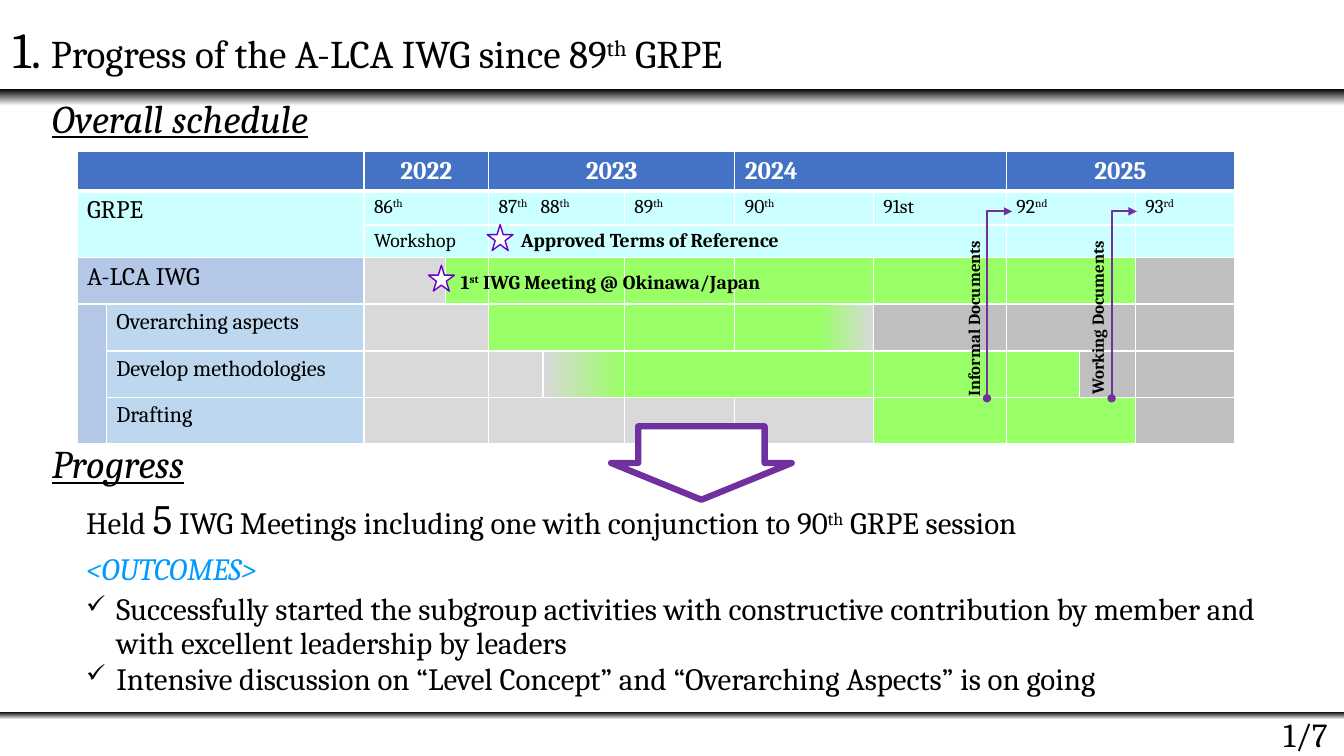
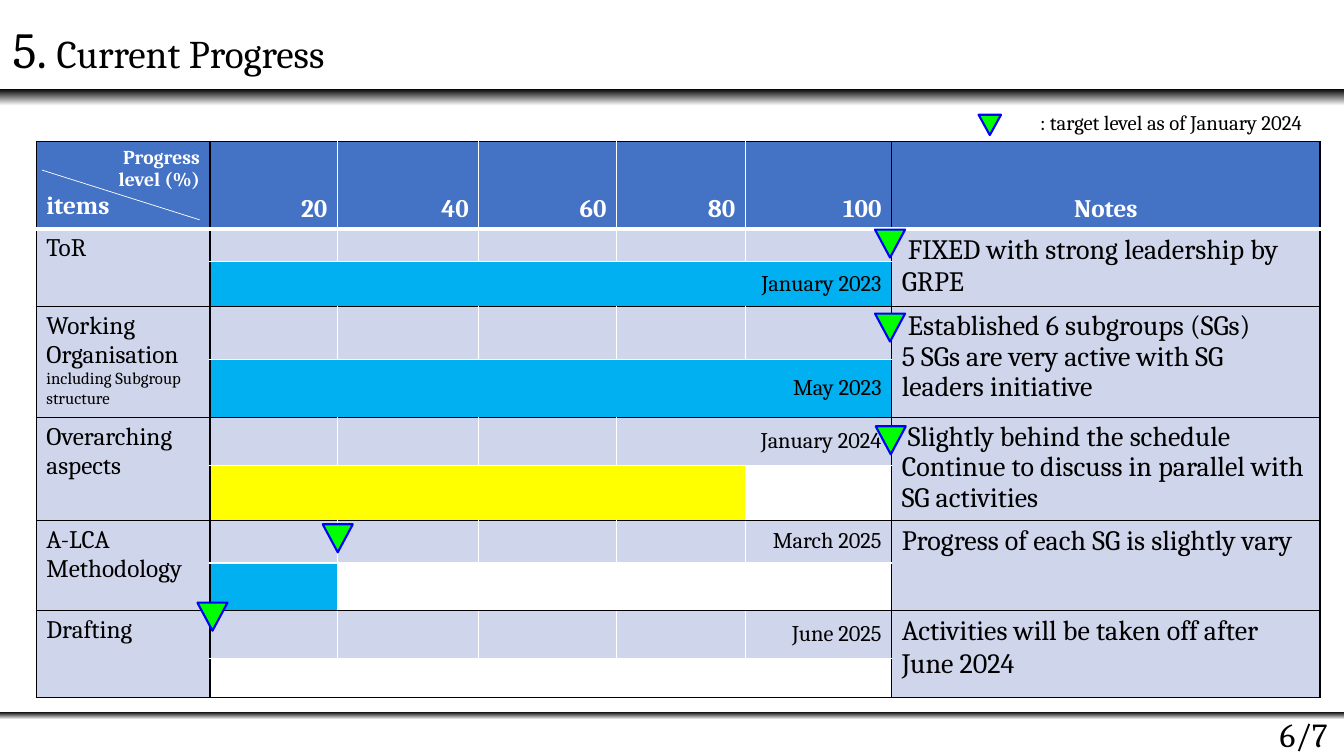
from itertools import product

from lxml import etree
from pptx import Presentation
from pptx.dml.color import RGBColor
from pptx.enum import shapes, text
from pptx.oxml import ns
from pptx.util import Pt

BLACK, WHITE, BLUE, CYAN = "000000", "FFFFFF", "4472C4", "CCFFFF"
PERIWINKLE, PALE_BLUE, LILAC = "B4C7E7", "BDD7EE", "CFD5EA"
GREEN, LIGHT_GREY, GREY = "99FF66", "D9D9D9", "BFBFBF"
SKY, YELLOW, LIME, PURPLE = "00B0F0", "FFFF00", "00FF00", "7030A0"
FADE_OUT = (LIGHT_GREY, GREEN, 0.39)
FADE_IN = (GREEN, LIGHT_GREY, 0.99)
BAND = (BLACK, WHITE, 1)
LEFT, CENTER, RIGHT = (text.PP_ALIGN.LEFT, text.PP_ALIGN.CENTER,
                       text.PP_ALIGN.RIGHT)
TOP, MIDDLE, BOTTOM = (text.MSO_ANCHOR.TOP, text.MSO_ANCHOR.MIDDLE,
                       text.MSO_ANCHOR.BOTTOM)
KIND = shapes.MSO_SHAPE


def paint(fill, colour, angle=180):
    """Fill with one hex colour, or with (first, second, end position)."""
    if isinstance(colour, str):
        fill.solid()
        fill.fore_color.rgb = RGBColor.from_string(colour)
        return
    first, second, end = colour
    fill.gradient()
    fill.gradient_angle = angle
    for stop, shade, position in zip(fill.gradient_stops, (first, second), (0, end)):
        stop.color.rgb = RGBColor.from_string(shade)
        stop.position = position


def write(frame, spans, look, colour=BLACK, **font_look):
    """Add a paragraph of (text, size) spans; text between ^ marks is raised."""
    para = frame.add_paragraph() if frame.text else frame.paragraphs[0]
    for name, value in look.items():
        setattr(para, name, value)
    for words, size in spans:
        for number, part in enumerate(words.split("^")):
            if not part:
                continue
            span = para.add_run()
            span.text = part
            font_format = {"name": "Cambria", "size": Pt(size), **font_look}
            for name, value in font_format.items():
                setattr(span.font, name, value)
            paint(span.font.fill, colour)
            if number % 2:
                span.font._element.set("baseline", "30000")
    return para


deck = Presentation()
deck.slide_width, deck.slide_height = Pt(960), Pt(540)
schedule_page, progress_page = pages = [
    deck.slides.add_slide(deck.slide_layouts[6]) for _ in range(2)]

# Schedule table: each entry is (columns, fill, text); None is a covered cell
schedule = [
    [(2, BLUE, ""), (2, BLUE, "2022"), (3, BLUE, "2023"), (2, BLUE, "2024"),
     (3, BLUE, "2025")],
    [(2, CYAN, "GRPE"), (2, CYAN, "86^th^"), (2, CYAN, "87^th^\t88^th^"),
     (1, CYAN, "89^th^"), (1, CYAN, "90^th^"), (1, CYAN, "91st"),
     (2, CYAN, "92^nd^"), (1, CYAN, "93^rd^")],
    [(2, None, ""), (2, CYAN, "Workshop"), (5, CYAN, ""), (2, CYAN, ""),
     (1, CYAN, "")],
    [(2, PERIWINKLE, "A-LCA IWG"), (1, LIGHT_GREY, ""), (1, GREEN, ""),
     (2, GREEN, ""), (1, GREEN, ""), (1, GREEN, ""), (1, GREEN, ""),
     (2, GREEN, ""), (1, GREY, "")],
    [(1, PERIWINKLE, ""), (1, PALE_BLUE, "Overarching aspects"),
     (2, LIGHT_GREY, ""), (2, GREEN, ""), (1, GREEN, ""), (1, FADE_OUT, ""),
     (1, GREY, ""), (2, GREY, ""), (1, GREY, "")],
    [(1, None, ""), (1, PALE_BLUE, "Develop methodologies"),
     (2, LIGHT_GREY, ""), (1, LIGHT_GREY, ""), (1, FADE_IN, ""),
     (2, GREEN, ""), (1, GREEN, ""), (1, GREEN, ""), (1, GREY, ""),
     (1, GREY, "")],
    [(1, None, ""), (1, PALE_BLUE, "Drafting"), (2, LIGHT_GREY, ""),
     (2, LIGHT_GREY, ""), (1, LIGHT_GREY, ""), (1, LIGHT_GREY, ""),
     (1, GREEN, ""), (2, GREEN, ""), (1, GREY, "")],
]
# Cells: (row, column, rows, columns, fill, anchor, [(text, size, look)])
schedule_cells = []
for row, entries in enumerate(schedule):
    column = 0
    for across, fill, words in entries:
        down = {(1, 0): 2, (4, 0): 3}.get((row, column), 1)
        size = 18 if row == 0 or column == 0 else 14 if row < 3 else 16
        align = CENTER if row == 0 and words != "2024" else LEFT
        lines = [(words, size, {"alignment": align})] if words else []
        if fill:
            schedule_cells.append((row, column, down, across, fill, TOP, lines))
        column += across

# Progress table: item lines, notes, date, columns of the upper and lower row
progress = [
    ([("ToR", 18)], [" FIXED with strong leadership by GRPE"], "January 2023",
     [1] * 5, [(5, SKY)]),
    ([("Working", 18), ("Organisation", 18), ("including Subgroup structure", 12)],
     [" Established 6 subgroups (SGs)",
      "5 SGs are very active with SG leaders initiative"], "May 2023",
     [1] * 5, [(5, SKY)]),
    ([("Overarching aspects", 18)],
     [" Slightly behind the schedule",
      "Continue to discuss in parallel with SG activities"], "January 2024",
     [1, 1, 1, 2], [(4, YELLOW), (1, WHITE)]),
    ([("A-LCA Methodology", 18)], ["Progress of each SG is slightly vary"],
     "March 2025", [1] * 5, [(1, SKY)] + [(1, WHITE)] * 4),
    ([("Drafting", 18)], ["Activities will be taken off after June 2024"],
     "June 2025", [1] * 5, [(1, WHITE)] * 5),
]
to_right = {"alignment": RIGHT}
progress_cells = [
    (0, 0, 1, 1, BLUE, TOP, [("Progress", 14, to_right),
                             ("level (%)", 14, to_right), ("items", 18, {})]),
    (0, 6, 1, 1, BLUE, BOTTOM, [("Notes", 18, {"alignment": CENTER})])]
for column in range(1, 6):
    progress_cells.append((0, column, 1, 1, BLUE, BOTTOM,
                           [(str(column * 20), 18, to_right)]))
for group, (items, notes, date, upper, lower) in enumerate(progress):
    top_row = 1 + 2 * group
    spacing = {"line_spacing": Pt(22)} if len(notes) > 1 else {}
    progress_cells += [
        (top_row, 0, 2, 1, LILAC, TOP, [(*item, {}) for item in items]),
        (top_row, 6, 2, 1, LILAC, TOP, [(note, 20, spacing) for note in notes])]
    dated_row = top_row + (len(lower) == 1)
    bars = [[(across, LILAC) for across in upper], lower]
    for row, row_bars in enumerate(bars, top_row):
        column = 1
        for across, fill in row_bars:
            dated = row == dated_row and column + across == 6
            lines = [(date, 16, to_right)] if dated else []
            progress_cells.append((row, column, 1, across, fill, MIDDLE, lines))
            column += across

tables = [
    (schedule_page, 55, 108.2, [21, 184, 58, 31, 39, 58, 79, 99, 95, 52, 40, 71],
     [28, 24.5, 23.5, 33, 33.5, 33, 33.5], schedule_cells, False),
    (progress_page, 26, 101, [124, 91, 101, 98.5, 92, 104.5, 306],
     [60.5, 23.5, 32, 38, 38.5, 34.5, 39, 30.5, 34, 34.5, 27.5],
     progress_cells, True),
]
for page, left, top, widths, heights, cells, ruled in tables:
    table = page.shapes.add_table(len(heights), len(widths), Pt(left), Pt(top),
                                  Pt(sum(widths)), Pt(sum(heights))).table
    table.first_row = table.horz_banding = False
    for line, width in zip(table.columns, widths):
        line.width = Pt(width)
    for line, height in zip(table.rows, heights):
        line.height = Pt(height)
    for row, column, down, across, fill, anchor, lines in cells:
        last = column + across - 1
        cell = table.cell(row, column)
        if down * across > 1:
            cell.merge(table.cell(row + down - 1, last))
        cell.vertical_anchor = anchor
        for words, size, look in lines:
            write(cell.text_frame, [(words, size)], look,
                  BLACK if row else WHITE, bold=row == 0)
        black_sides = {
            "lnL": column in (0, 1, 6), "lnR": last in (0, 5, 6),
            "lnT": row == 0 or row > 1 and row % 2 == 1,
            "lnB": row > 0 and (row % 2 == 0 or down == 2)}
        for part_row, part_column in product(range(row, row + down),
                                             range(column, last + 1)):
            part = table.cell(part_row, part_column)
            paint(part.fill, fill)
            properties = part._tc.get_or_add_tcPr()
            for place, (side, black) in enumerate(black_sides.items()):
                weight = 3 if row == 0 and side == "lnB" else 1
                edge = etree.Element(ns.qn("a:" + side), w=str(Pt(weight)))
                solid = etree.SubElement(edge, ns.qn("a:solidFill"))
                etree.SubElement(solid, ns.qn("a:srgbClr"),
                                 val=BLACK if ruled and black else WHITE)
                properties.insert(place, edge)
            if not part.text_frame.text:
                etree.SubElement(part.text_frame.paragraphs[0]._p,
                                 ns.qn("a:endParaRPr"), sz="800")
    if page is schedule_page:
        sessions = table.cell(1, 4).text_frame.paragraphs[0]._p.get_or_add_pPr()
        tabs = etree.SubElement(sessions, ns.qn("a:tabLst"))
        etree.SubElement(tabs, ns.qn("a:tab"), pos=str(Pt(30)), algn="l")

# Shapes: page, kind, left, top, width, height, fill, line colour, line width
drawings = []
for page in pages:
    drawings += [(page, KIND.RECTANGLE, 0, 508.5, 960, 5.5, BAND, None, 0),
                 (page, KIND.RECTANGLE, 0, 63.5, 960, 12, BAND, None, 0)]
for left, top in [(306, 189.5), (348, 160.5)]:
    drawings.append((schedule_page, KIND.STAR_5_POINT, left, top, 18.5, 18.5,
                     WHITE, "6600CC", 1))
drawings.append((schedule_page, KIND.DOWN_ARROW, 436.5, 304.5, 129, 52.5,
                 WHITE, PURPLE, 4.5))
targets = [(625, 164), (625, 224), (625.5, 304.5), (230.5, 374.5), (141, 430.5)]
for left, top, width, height in [(699, 82, 16, 14.5),
                                 *((*spot, 21.5, 20) for spot in targets)]:
    drawings.append((progress_page, KIND.ISOSCELES_TRIANGLE, left, top, width,
                     height, LIME, "0000FF", 1.5))
for page, kind, left, top, width, height, fill, outline, weight in drawings:
    shape = page.shapes.add_shape(kind, Pt(left), Pt(top), Pt(width), Pt(height))
    shape.shadow.inherit = False
    paint(shape.fill, fill, angle=270)
    if outline:
        paint(shape.line.fill, outline)
        shape.line.width = Pt(weight)
    else:
        shape.line.fill.background()
    if kind == KIND.DOWN_ARROW:
        shape.adjustments[0] = 0.7
    if kind == KIND.ISOSCELES_TRIANGLE:
        shape.rotation = 180

for left in (705, 794):
    builder = schedule_page.shapes.build_freeform(Pt(left), Pt(284.5))
    builder.add_line_segments([(Pt(left), Pt(151)), (Pt(left + 18), Pt(151))],
                              close=False)
    deadline = builder.convert_to_shape()
    deadline.shadow.inherit = False
    deadline.fill.background()
    paint(deadline.line.fill, PURPLE)
    deadline.line.width = Pt(1.5)
    stroke = deadline._element.spPr.find(ns.qn("a:ln"))
    for end, arrow in {"headEnd": "oval", "tailEnd": "triangle"}.items():
        etree.SubElement(stroke, ns.qn("a:" + end), type=arrow)

diagonal = progress_page.shapes.add_connector(
    shapes.MSO_CONNECTOR.STRAIGHT, Pt(30), Pt(121.5), Pt(142.5), Pt(157))
paint(diagonal.line.fill, WHITE)
diagonal.line.width = Pt(0.5)
etree.SubElement(diagonal._element.spPr, ns.qn("a:effectLst"))

# Text boxes: page, left, top, width, height, spans, alignment, font, frame
heading = {"italic": True, "underline": True}
strong = {"bold": True}
captions = [
    (schedule_page, 30, 63.5, 232, 41, [("Overall schedule", 28)], LEFT, heading, 0),
    (schedule_page, 30, 310.5, 232, 41, [("Progress", 28)], LEFT, heading, 0),
    (schedule_page, 322, 189.5, 267, 28,
     [("1^st^ IWG Meeting @ Okinawa/Japan", 14)], LEFT, strong, 0),
    (schedule_page, 365, 159, 251, 28,
     [("Approved Terms of Reference", 14)], LEFT, strong, 0),
    (schedule_page, 626.5, 202.5, 146, 30,
     [("Informal Documents", 12)], LEFT, strong, 270),
    (schedule_page, 715, 201, 146, 30,
     [("Working Documents", 12)], LEFT, strong, 270),
    (progress_page, 700, 75, 237, 26,
     [(": target level as of January 2024", 14.8)], RIGHT, {}, 0),
]
titles = [("1. ", "Progress of the A-LCA IWG since 89^th^ GRPE", "1/7"),
          ("5. ", "Current Progress", "6/7")]
for page, (number, title, page_number) in zip(pages, titles):
    captions += [
        (page, 2, 9.5, 957, 50, [(number, 36), (title, 28)], LEFT, {}, 0),
        (page, 847.5, 494.5, 108, 48, [(page_number, 24)], RIGHT, {}, 0)]
for page, left, top, width, height, spans, align, font_look, turn in captions:
    box = page.shapes.add_textbox(Pt(left), Pt(top), Pt(width), Pt(height))
    box.rotation = turn
    box.text_frame.word_wrap = True
    is_title = len(spans) > 1
    if is_title or top > 490:
        box.text_frame.vertical_anchor = BOTTOM
    before = 0 if is_title else 0.2 * spans[0][1]
    write(box.text_frame, spans, {"alignment": align, "space_before": Pt(before)},
          **font_look)

body = schedule_page.shapes.add_textbox(Pt(54.5), Pt(355.5), Pt(870), Pt(155))
body.text_frame.word_wrap = True
tight = {"line_spacing": 0.8, "space_before": Pt(4.4)}
write(body.text_frame,
      [("Held ", 22.1), ("5", 29.8),
       (" IWG Meetings including one with conjunction to 90^th^ GRPE session", 22.1)],
      {**tight, "space_before": Pt(6), "space_after": Pt(6)})
write(body.text_frame, [("<OUTCOMES>", 22.1)], tight, "0099FF", italic=True)
outcomes = [
    ("Successfully started the subgroup activities with constructive contribution "
     "by member and with excellent leadership by leaders", Pt(24)),
    ("Intensive discussion on “Level Concept” and “Overarching Aspects” is on going",
     0.8)]
for words, spacing in outcomes:
    para = write(body.text_frame, [(words, 22.1)], {**tight, "line_spacing": spacing})
    properties = para._p.get_or_add_pPr()
    properties.set("marL", str(Pt(21.5)))
    properties.set("indent", str(-Pt(21.5)))
    etree.SubElement(properties, ns.qn("a:buSzPct"), val="80000")
    etree.SubElement(properties, ns.qn("a:buChar"), char="✓")

deck.save("out.pptx")
